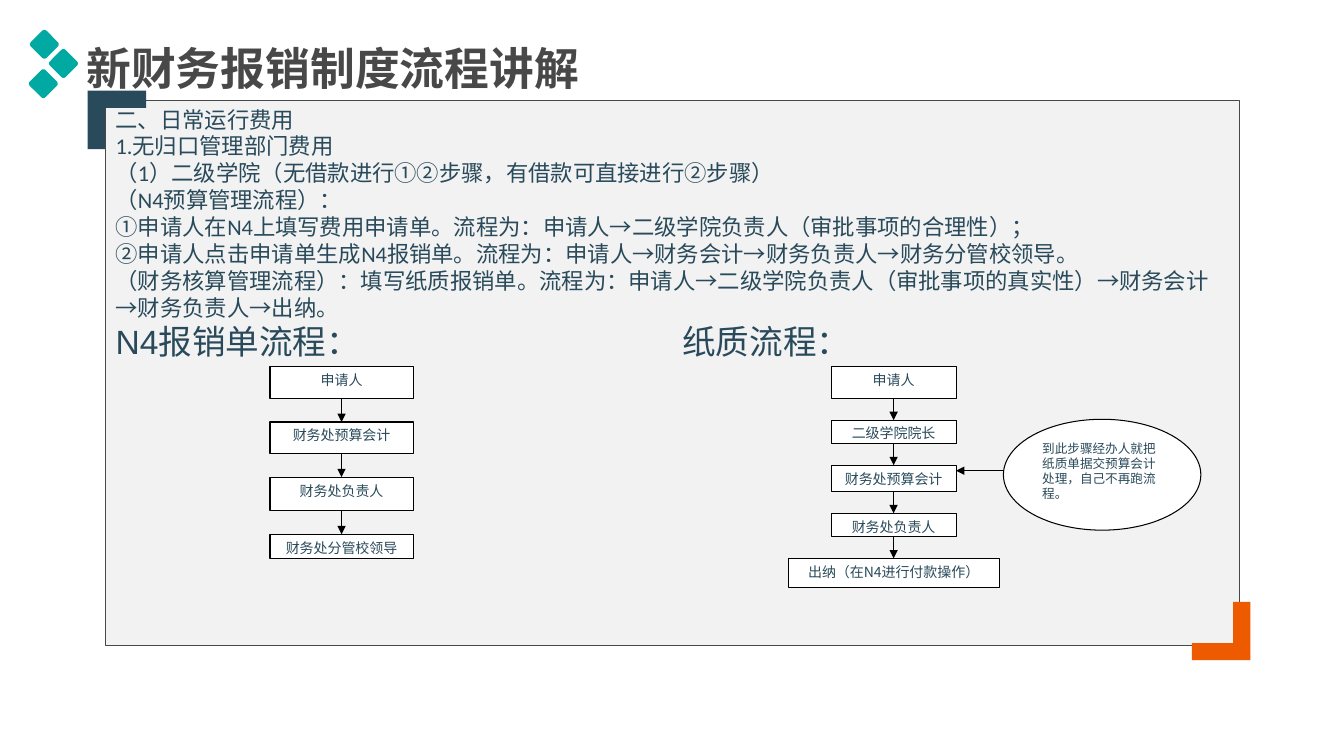
from collections import namedtuple
from dataclasses import dataclass

from lxml import etree
from pptx import Presentation
from pptx.dml.color import RGBColor
from pptx.enum.shapes import MSO_CONNECTOR, MSO_SHAPE
from pptx.enum.text import MSO_ANCHOR, PP_ALIGN
from pptx.oxml.ns import qn
from pptx.util import Inches, Pt

RECTANGLE, ROUNDED, OVAL = MSO_SHAPE.RECTANGLE, MSO_SHAPE.ROUNDED_RECTANGLE, MSO_SHAPE.OVAL
STRAIGHT = MSO_CONNECTOR.STRAIGHT
TOP, LEFT, CENTER = MSO_ANCHOR.TOP, PP_ALIGN.LEFT, PP_ALIGN.CENTER

Box = namedtuple("Box", "left top width height")


@dataclass(frozen=True)
class Theme:
    white: str = "FFFFFF"
    black: str = "000000"
    gray: str = "484849"
    panel: str = "F2F2F2"
    teal: str = "00AAA2"
    navy: str = "294A5A"
    orange: str = "ED5A00"
    cjk: str = "Noto Sans CJK SC"
    body_font: str = "Calibri"
    heading_font: str = "Arial"
    title_size: int = 32
    heading_size: int = 24
    body_size: int = 16
    step_size: int = 10
    note_size: int = 9
    line_width: float = 0.75
    line_spacing: float = 1.2


THEME = Theme()

RULES = [
    "二、日常运行费用",
    "1.无归口管理部门费用",
    "（1）二级学院（无借款进行①②步骤，有借款可直接进行②步骤）",
    "（N4预算管理流程）：",
    "①申请人在N4上填写费用申请单。流程为：申请人→二级学院负责人（审批事项的合理性）；",
    "②申请人点击申请单生成N4报销单。流程为：申请人→财务会计→财务负责人→财务分管校领导。",
    "（财务核算管理流程）：填写纸质报销单。流程为：申请人→二级学院负责人（审批事项的真实性）"
    "→财务会计→财务负责人→出纳。",
]
# Each step: text, height, width as a share of the flow column
SYSTEM_STEPS = [("申请人", 0.31, 1), ("财务处预算会计", 0.31, 1),
                ("财务处负责人", 0.33, 1), ("财务处分管校领导", 0.24, 1)]
PAPER_STEPS = [("申请人", 0.31, 1), ("二级学院院长", 0.23, 1), ("财务处预算会计", 0.26, 1),
               ("财务处负责人", 0.23, 1), ("出纳（在N4进行付款操作）", 0.29, 1.69)]
NOTE = "到此步骤经办人就把纸质单据交预算会计处理，自己不再跑流程。"


def color(value):
    return RGBColor.from_string(value)


def write(paragraph, text, size, font, ink=THEME.navy, bold=False, align=LEFT):
    paragraph.text = text
    paragraph.alignment = align
    paragraph.line_spacing = Pt(size * THEME.line_spacing)
    for run in paragraph.runs:
        run.font.size, run.font.name, run.font.bold = Pt(size), font, bold
        run.font.color.rgb = color(ink)
        east_asian = etree.SubElement(run.font._element, qn("a:ea"))
        east_asian.set("typeface", THEME.cjk)


def paint(shape, fill, line=None):
    shape.shadow.inherit = False
    shape.fill.solid()
    shape.fill.fore_color.rgb = color(fill)
    if line:
        shape.line.color.rgb = color(line)
        shape.line.width = Pt(THEME.line_width)
    else:
        shape.line.fill.background()


def add_block(slide, kind, box, fill, line=None):
    shape = slide.shapes.add_shape(kind, *map(Inches, box))
    paint(shape, fill, line)
    shape.text_frame.word_wrap = True
    shape.text_frame.vertical_anchor = TOP
    return shape


def add_text(slide, box):
    frame = slide.shapes.add_textbox(*map(Inches, box)).text_frame
    frame.word_wrap = True
    return frame


def add_arrow(slide, *ends):
    connector = slide.shapes.add_connector(STRAIGHT, *map(Inches, ends))
    connector.line.color.rgb = color(THEME.black)
    connector.line.width = Pt(THEME.line_width)
    etree.SubElement(connector.line._get_or_add_ln(), qn("a:tailEnd")).set("type", "triangle")
    etree.SubElement(connector._element.spPr, qn("a:effectLst"))


def add_bracket(slide, x, y, direction, fill):
    """Draw a corner at (x, y) with arms pointing inward along direction."""
    arm, thick = 0.58, 0.17
    outline = [(0, 0), (arm, 0), (arm, thick), (thick, thick), (thick, arm), (0, arm)]
    points = [(Inches(x + direction * dx), Inches(y + direction * dy)) for dx, dy in outline]
    builder = slide.shapes.build_freeform(*points[0])
    builder.add_line_segments(points[1:], close=True)
    paint(builder.convert_to_shape(), fill)


def draw_header(slide, box):
    title = add_text(slide, Box(box.left + 0.47, box.top + 0.07, 6.54, 0.64))
    write(title.paragraphs[0], "新财务报销制度流程讲解", THEME.title_size, THEME.cjk,
          THEME.gray, bold=True)
    # Three rounded diamonds
    side = 0.22
    for dx, dy in [(0.15, 0.15), (0.34, 0.34), (0.14, 0.54)]:
        place = Box(box.left + dx - side / 2, box.top + dy - side / 2, side, side)
        diamond = add_block(slide, ROUNDED, place, THEME.teal)
        diamond.adjustments[0] = 0.13
        diamond.rotation = 45


def draw_panel(slide, box):
    add_block(slide, RECTANGLE, box, THEME.panel, THEME.gray)
    # Rules and the two flow headings
    frame = add_text(slide, box._replace(width=11.07))
    for index, text in enumerate(RULES):
        paragraph = frame.add_paragraph() if index else frame.paragraphs[0]
        write(paragraph, text, THEME.body_size, THEME.body_font)
    write(frame.add_paragraph(), "N4报销单流程：", THEME.heading_size, THEME.heading_font)
    heading = add_text(slide, Box(box.left + box.width / 2, box.top + 2.13, 4.37, 0.5))
    write(heading.paragraphs[0], "纸质流程：", THEME.heading_size, THEME.heading_font)
    # Corner brackets
    add_bracket(slide, box.left - 0.18, box.top - 0.1, 1, THEME.navy)
    add_bracket(slide, box.left + box.width + 0.11, box.top + box.height + 0.15, -1, THEME.orange)


def draw_flow(slide, box, steps):
    """Stack the steps with equal gaps, joined by arrows."""
    gap = (box.height - sum(height for _, height, _ in steps)) / (len(steps) - 1)
    middle, top = box.left + box.width / 2, box.top
    for index, (text, height, share) in enumerate(steps):
        width = box.width * share
        place = Box(middle - width / 2, top, width, height)
        step = add_block(slide, RECTANGLE, place, THEME.white, THEME.black)
        write(step.text_frame.paragraphs[0], text, THEME.step_size, THEME.cjk, align=CENTER)
        if index:
            add_arrow(slide, middle, top - gap, middle, top)
        top += height + gap


def draw_note(slide, box, target_x):
    bubble = add_block(slide, OVAL, box, THEME.white, THEME.black)
    write(bubble.text_frame.paragraphs[0], NOTE, THEME.note_size, THEME.cjk)
    arrow_y = box.top + 0.51
    add_arrow(slide, box.left, arrow_y, target_x, arrow_y)


def main():
    presentation = Presentation()
    presentation.slide_width, presentation.slide_height = Inches(13.34), Inches(7.5)
    slide = presentation.slides.add_slide(presentation.slide_layouts[6])
    draw_header(slide, Box(0.29, 0.29, 7.01, 0.71))
    draw_panel(slide, Box(1.05, 1, 11.25, 5.4))
    draw_flow(slide, Box(2.68, 3.64, 1.42, 1.9), SYSTEM_STEPS)
    paper = Box(8.25, 3.64, 1.24, 2.19)
    draw_flow(slide, paper, PAPER_STEPS)
    draw_note(slide, Box(9.96, 4.16, 1.96, 1.1), paper.left + paper.width)
    presentation.save("out.pptx")


if __name__ == "__main__":
    main()
